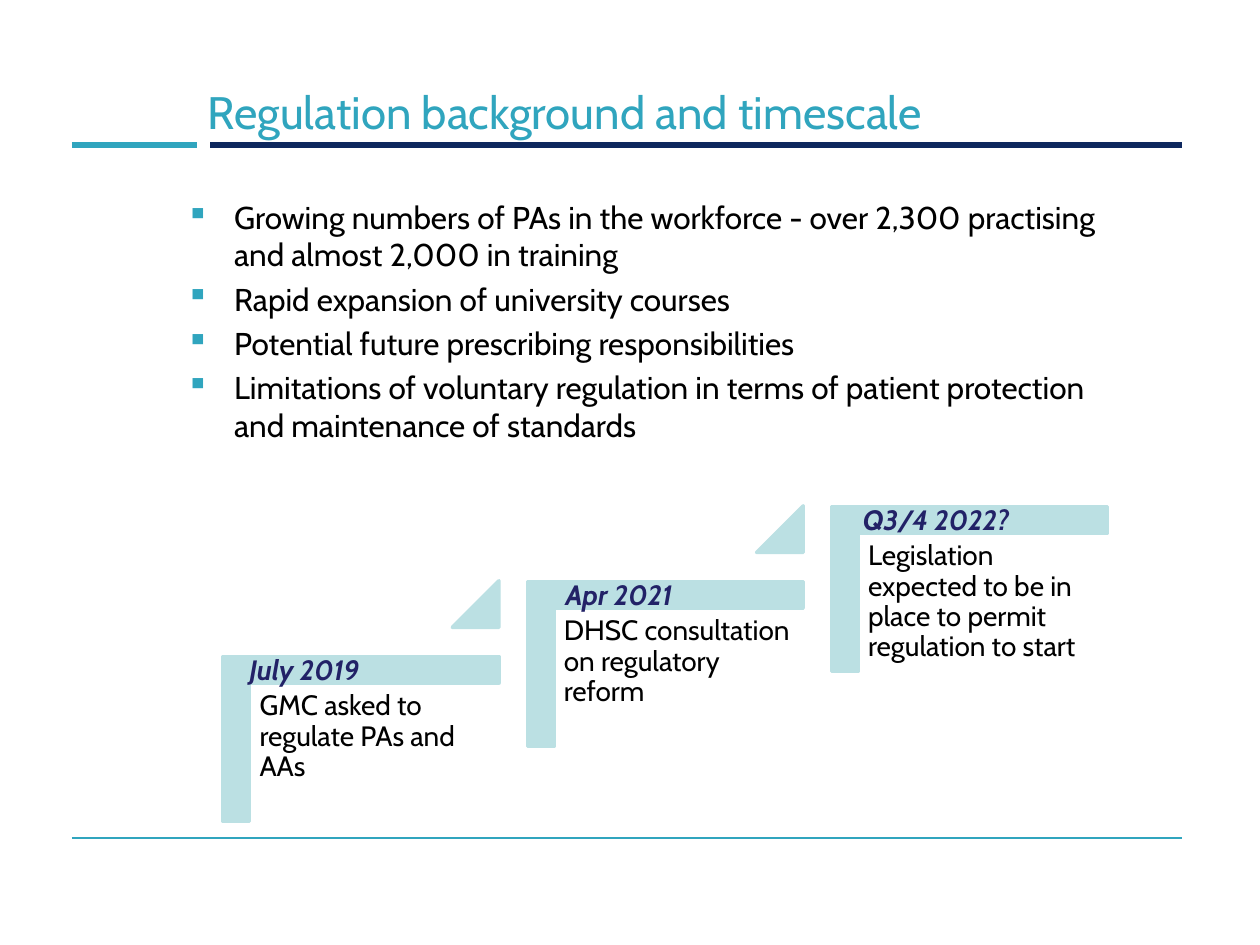
from lxml.etree import SubElement
from pptx import Presentation
from pptx.dml.color import RGBColor
from pptx.enum.shapes import MSO_CONNECTOR, MSO_SHAPE
from pptx.enum.text import MSO_ANCHOR
from pptx.oxml.ns import qn
from pptx.util import Inches, Pt

COLORS = {
    "teal": "30A5BE",
    "navy": "0E285E",
    "date": "222267",
    "step": "BBE0E3",
    "text": "000000",
}
FONT = "Cabin"
BULLETS = [
    "Growing numbers of PAs in the workforce - over 2,300 practising and almost 2,000 in training",
    "Rapid expansion of university courses",
    "Potential future prescribing responsibilities",
    "Limitations of voluntary regulation in terms of patient protection and maintenance of standards",
]
STEPS = [
    ("July 2019", 1.88, "GMC asked to regulate PAs and AAs"),
    ("Apr 2021", 4.39, "DHSC consultation on regulatory reform"),
    ("Q3/4 2022?", 6.75, "Legislation expected to be in place to permit regulation to start"),
]
STEP_DX, STEP_DY = 2.415, -0.595


def rgb(name):
    return RGBColor.from_string(COLORS[name])


def add_rule(s, x1, x2, y, color, width):
    line = s.shapes.add_connector(
        MSO_CONNECTOR.STRAIGHT, Inches(x1), Inches(y), Inches(x2), Inches(y)
    )
    line.line.color.rgb = rgb(color)
    line.line.width = Pt(width)
    SubElement(line._element.spPr, qn("a:effectLst"))


def add_box(s, x, y, w, h, inset=None, anchor=MSO_ANCHOR.TOP):
    tf = s.shapes.add_textbox(Inches(x), Inches(y), Inches(w), Inches(h)).text_frame
    tf.word_wrap = True
    tf.vertical_anchor = anchor
    if inset is not None:
        tf.margin_left = tf.margin_right = Inches(inset)
        tf.margin_top = tf.margin_bottom = Inches(inset)
    return tf


def add_run(p, text, size, color="text", strong=False):
    r = p.add_run()
    r.text = text
    r.font.name = FONT
    r.font.size = Pt(size)
    r.font.color.rgb = rgb(color)
    r.font.bold = r.font.italic = strong


def set_bullet(p):
    pPr = p._p.get_or_add_pPr()
    pPr.set("marL", str(Inches(0.38)))
    pPr.set("indent", str(-Inches(0.38)))
    color = SubElement(pPr, qn("a:buClr"))
    SubElement(color, qn("a:srgbClr"), val=COLORS["teal"])
    SubElement(pPr, qn("a:buChar"), char="▪")


def add_bullets(s, items):
    tf = add_box(s, 1.38, 1.52, 7.76, 2.2)
    for i, item in enumerate(items):
        p = tf.add_paragraph() if i else tf.paragraphs[0]
        set_bullet(p)
        if i:
            p.space_before = Pt(3.6)
        add_run(p, item, 18)


def add_step_shape(s, kind, x, y, w, h, adjustments, rotation=0):
    sp = s.shapes.add_shape(kind, Inches(x), Inches(y), Inches(w), Inches(h))
    sp.shadow.inherit = False
    sp.rotation = rotation
    for i, value in enumerate(adjustments):
        sp.adjustments[i] = value
    sp.fill.solid()
    sp.fill.fore_color.rgb = rgb("step")
    sp.line.color.rgb = rgb("step")
    sp.line.width = Pt(2)


def add_step(s, i, text, last):
    dx, dy = i * STEP_DX, i * STEP_DY
    add_step_shape(s, MSO_SHAPE.CORNER, 2.21 + dx, 4.77 + dy, 1.31, 2.19, (0.161, 0.161), 90)
    p = add_box(s, 1.99 + dx, 5.42 + dy, 1.97, 1.73, inset=0.07).paragraphs[0]
    p.line_spacing = 0.9
    add_run(p, text, 16)
    if not last:
        add_step_shape(s, MSO_SHAPE.ISOSCELES_TRIANGLE, 3.59 + dx, 4.61 + dy, 0.37, 0.37, (1,))


def add_date(s, i, x, date):
    tf = add_box(s, x, 5.13 + i * STEP_DY, 1.69, 0.37)
    add_run(tf.paragraphs[0], date, 16, "date", strong=True)


def main():
    """Build the regulation timescale slide and save it."""
    prs = Presentation()
    prs.slide_width, prs.slide_height = Inches(10), Inches(7.5)
    s = prs.slides.add_slide(prs.slide_layouts[6])
    add_rule(s, 1.67, 9.38, 1.15, "navy", 3)
    add_rule(s, 0.57, 1.56, 1.15, "teal", 3)
    add_rule(s, 0.57, 9.38, 6.65, "teal", 0.75)
    title = add_box(s, 1.55, 0.52, 7.83, 0.73, anchor=MSO_ANCHOR.MIDDLE)
    add_run(title.paragraphs[0], "Regulation background and timescale", 26, "teal")
    add_bullets(s, BULLETS)
    for i, (date, x, text) in enumerate(STEPS):
        add_step(s, i, text, last=i == len(STEPS) - 1)
        add_date(s, i, x, date)
    prs.save("out.pptx")


if __name__ == "__main__":
    main()
